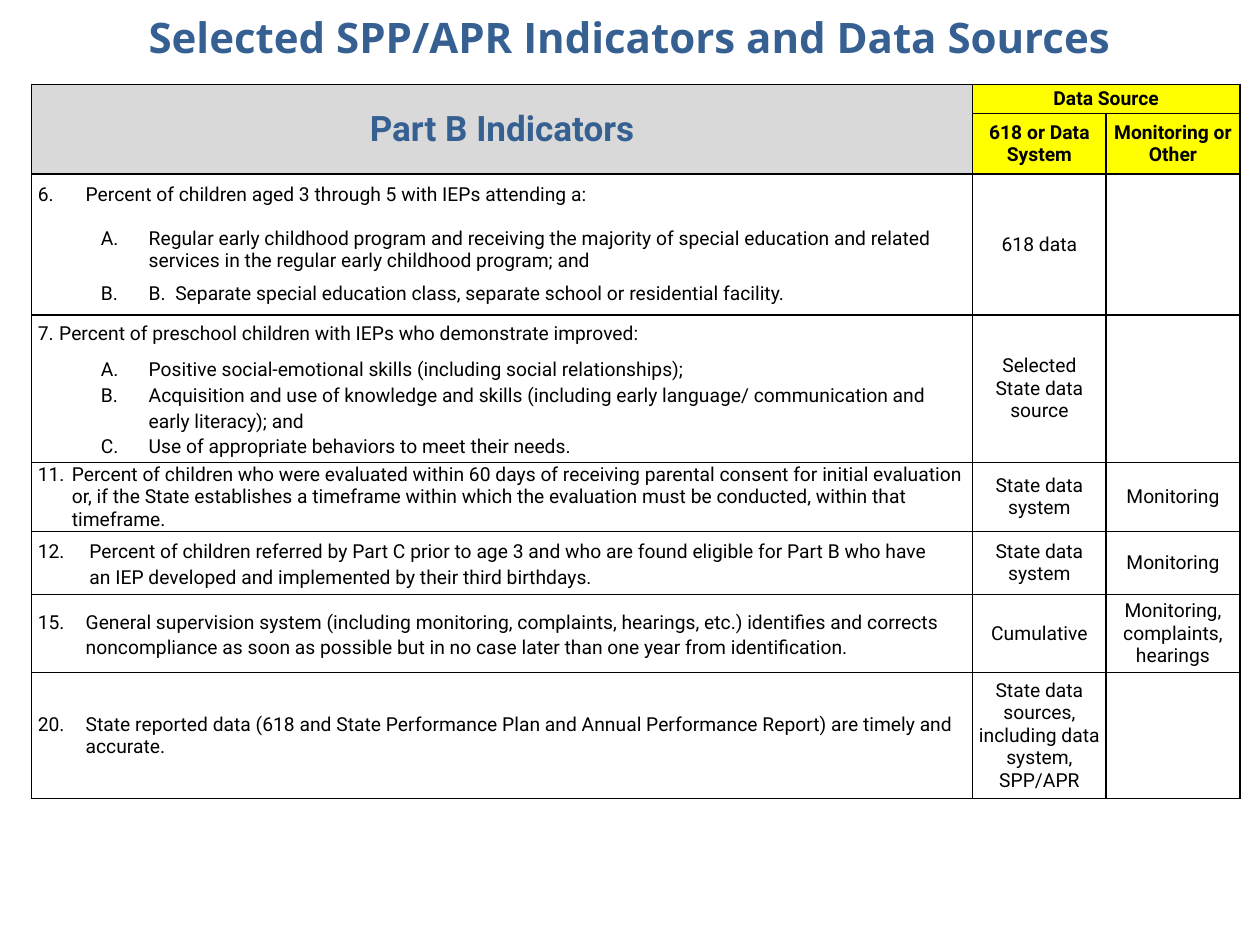
from dataclasses import dataclass

from lxml import etree
from pptx import Presentation
from pptx.dml.color import RGBColor
from pptx.enum.text import MSO_ANCHOR, MSO_AUTO_SIZE, PP_ALIGN
from pptx.oxml.ns import qn
from pptx.util import Inches, Pt

CENTER, LEFT = PP_ALIGN.CENTER, PP_ALIGN.LEFT
MIDDLE = MSO_ANCHOR.MIDDLE
NO_AUTOFIT = MSO_AUTO_SIZE.NONE


@dataclass(frozen=True)
class Theme:
    """Colours, fonts and type sizes of the slide."""
    blue: str = "376092"
    black: str = "000000"
    gray: str = "D9D9D9"
    yellow: str = "FFFF00"
    title_font: str = "Open Sans"
    body_font: str = "Roboto"
    title_size: float = 24
    heading_size: float = 20
    body_size: float = 11
    border: float = 1


THEME = Theme()
COLUMN_WIDTHS = (7.47, 1.06, 1.06)
ROW_HEIGHTS = (0.23, 0.48, 1.12, 1.17, 0.55, 0.5, 0.62, 1)
NUMBERED = {"margin": 0.38, "hanging": 0.38, "before": 6, "after": 6, "bullet": "arabicPeriod"}
LETTERED = {"margin": 0.88, "hanging": 0.38, "level": 1, "bullet": "alphaUcPeriod"}
WIDE = {"spacing": 1.15}
SPACED = {"before": 6}

INDICATORS = (
    ([("Percent of children aged 3 through 5 with IEPs attending a:", NUMBERED | {"start": 6}),
      ("Regular early childhood program and receiving the majority of special education "
       "and related services in the regular early childhood program; and", LETTERED | SPACED),
      ("B.  Separate special education class, separate school or residential facility.",
       LETTERED | SPACED)],
     "618 data", ""),
    ([("7.\tPercent of preschool children with IEPs who demonstrate improved:",
       WIDE | SPACED | {"margin": 0.17, "hanging": 0.17}),
      ("Positive social-emotional skills (including social relationships);",
       LETTERED | WIDE | SPACED),
      ("Acquisition and use of knowledge and skills (including early language/ "
       "communication and early literacy); and", LETTERED | WIDE),
      ("Use of appropriate behaviors to meet their needs.", LETTERED | WIDE)],
     "Selected State data source", ""),
    ([("11.\tPercent of children who were evaluated within 60 days of receiving parental "
       "consent for initial evaluation or, if the State establishes a timeframe within which "
       "the evaluation must be conducted, within that timeframe.",
       {"margin": 0.27, "hanging": 0.27, "before": 6, "after": 6})],
     "State data system", "Monitoring"),
    ([("12.\tPercent of children referred by Part C prior to age 3 and who are found eligible "
       "for Part B who have\van IEP developed and implemented by their third birthdays.",
       WIDE | SPACED | {"margin": 0.41, "hanging": 0.41, "tab": 0.33})],
     "State data system", "Monitoring"),
    ([("General supervision system (including monitoring, complaints, hearings, etc.) "
       "identifies and corrects noncompliance as soon as possible but in no case later than "
       "one year from identification.", NUMBERED | WIDE | {"start": 15, "after": 0})],
     "Cumulative", "Monitoring, complaints, hearings"),
    ([("State reported data (618 and State Performance Plan and Annual Performance Report) "
       "are timely and accurate.", NUMBERED | {"start": 20})],
     "State data sources, including data system, SPP/APR", ""),
)


def write_text(paragraph, text, *, size=THEME.body_size, font=THEME.body_font,
               color=THEME.black, bold=False, align=LEFT, margin=0, hanging=0, level=0,
               before=0, after=0, spacing=1.0, bullet=None, start=1, tab=None):
    """Write text into a paragraph with its character and paragraph format."""
    paragraph.text = text
    paragraph.alignment = align
    paragraph.level = level
    paragraph.line_spacing = spacing
    paragraph.space_before, paragraph.space_after = Pt(before), Pt(after)
    for run in paragraph.runs:
        run.font.size, run.font.name, run.font.bold = Pt(size), font, bold
        run.font.color.rgb = RGBColor.from_string(color)
    properties = paragraph._p.get_or_add_pPr()
    properties.set("marL", str(Inches(margin)))
    properties.set("indent", str(-Inches(hanging)))
    if bullet:
        numbering = etree.SubElement(properties, qn("a:buAutoNum"), type=bullet)
        if start > 1:
            numbering.set("startAt", str(start))
    if tab:
        stops = etree.SubElement(properties, qn("a:tabLst"))
        etree.SubElement(stops, qn("a:tab"), pos=str(Inches(tab)), algn="l")


def style_cell(cell, fill=None):
    """Give a cell its margins, anchor, borders and fill."""
    cell.margin_left = cell.margin_right = Inches(0.05)
    cell.margin_top = cell.margin_bottom = 0
    cell.vertical_anchor = MIDDLE
    properties = cell._tc.get_or_add_tcPr()
    for side in ("a:lnL", "a:lnR", "a:lnT", "a:lnB"):
        line = etree.SubElement(properties, qn(side), w=str(Pt(THEME.border)))
        solid = etree.SubElement(line, qn("a:solidFill"))
        etree.SubElement(solid, qn("a:srgbClr"), val=THEME.black)
    if fill:
        cell.fill.solid()
        cell.fill.fore_color.rgb = RGBColor.from_string(fill)
    else:
        cell.fill.background()


def fill_header(table):
    """Fill the two header rows and merge their spanning cells."""
    for row in range(2):
        for column in range(3):
            style_cell(table.cell(row, column), THEME.yellow if column else THEME.gray)
    table.cell(0, 0).merge(table.cell(1, 0))
    table.cell(0, 1).merge(table.cell(0, 2))
    write_text(table.cell(0, 0).text_frame.paragraphs[0], "Part B Indicators",
               size=THEME.heading_size, color=THEME.blue, bold=True, align=CENTER)
    labels = {(0, 1): "Data Source", (1, 1): "618 or Data System", (1, 2): "Monitoring or Other"}
    for position, label in labels.items():
        write_text(table.cell(*position).text_frame.paragraphs[0], label,
                   bold=True, align=CENTER)


def fill_indicator(table, row, items, sources):
    """Fill one indicator row with its list and its data sources."""
    for column in range(3):
        style_cell(table.cell(row, column))
    frame = table.cell(row, 0).text_frame
    for index, (text, text_format) in enumerate(items):
        paragraph = frame.add_paragraph() if index else frame.paragraphs[0]
        write_text(paragraph, text, **text_format)
    for column, source in enumerate(sources, 1):
        if source:
            write_text(table.cell(row, column).text_frame.paragraphs[0], source,
                       align=CENTER, before=2)


def add_indicator_table(slide):
    """Add the table of indicators and data sources."""
    table = slide.shapes.add_table(
        len(ROW_HEIGHTS), len(COLUMN_WIDTHS), Inches(0.25), Inches(0.67),
        Inches(sum(COLUMN_WIDTHS)), Inches(sum(ROW_HEIGHTS))).table
    table.first_row = table.horz_banding = False
    for column, width in zip(table.columns, COLUMN_WIDTHS):
        column.width = Inches(width)
    for row, height in zip(table.rows, ROW_HEIGHTS):
        row.height = Inches(height)
    fill_header(table)
    for row, (items, *sources) in enumerate(INDICATORS, 2):
        fill_indicator(table, row, items, sources)


def set_title(slide, text):
    """Place and format the slide title."""
    title = slide.shapes.title
    title.left, title.top = Inches(0.91), Inches(0.04)
    title.width, title.height = Inches(8.17), Inches(0.5)
    frame = title.text_frame
    frame.word_wrap, frame.auto_size, frame.vertical_anchor = True, NO_AUTOFIT, MIDDLE
    write_text(frame.paragraphs[0], text, size=THEME.title_size, font=THEME.title_font,
               color=THEME.blue, bold=True, align=CENTER)


def main():
    """Build the slide and save it."""
    presentation = Presentation()
    presentation.slide_width, presentation.slide_height = Inches(10), Inches(7.5)
    slide = presentation.slides.add_slide(presentation.slide_layouts[5])
    add_indicator_table(slide)
    set_title(slide, "Selected SPP/APR Indicators and Data Sources")
    presentation.save("out.pptx")


if __name__ == "__main__":
    main()
